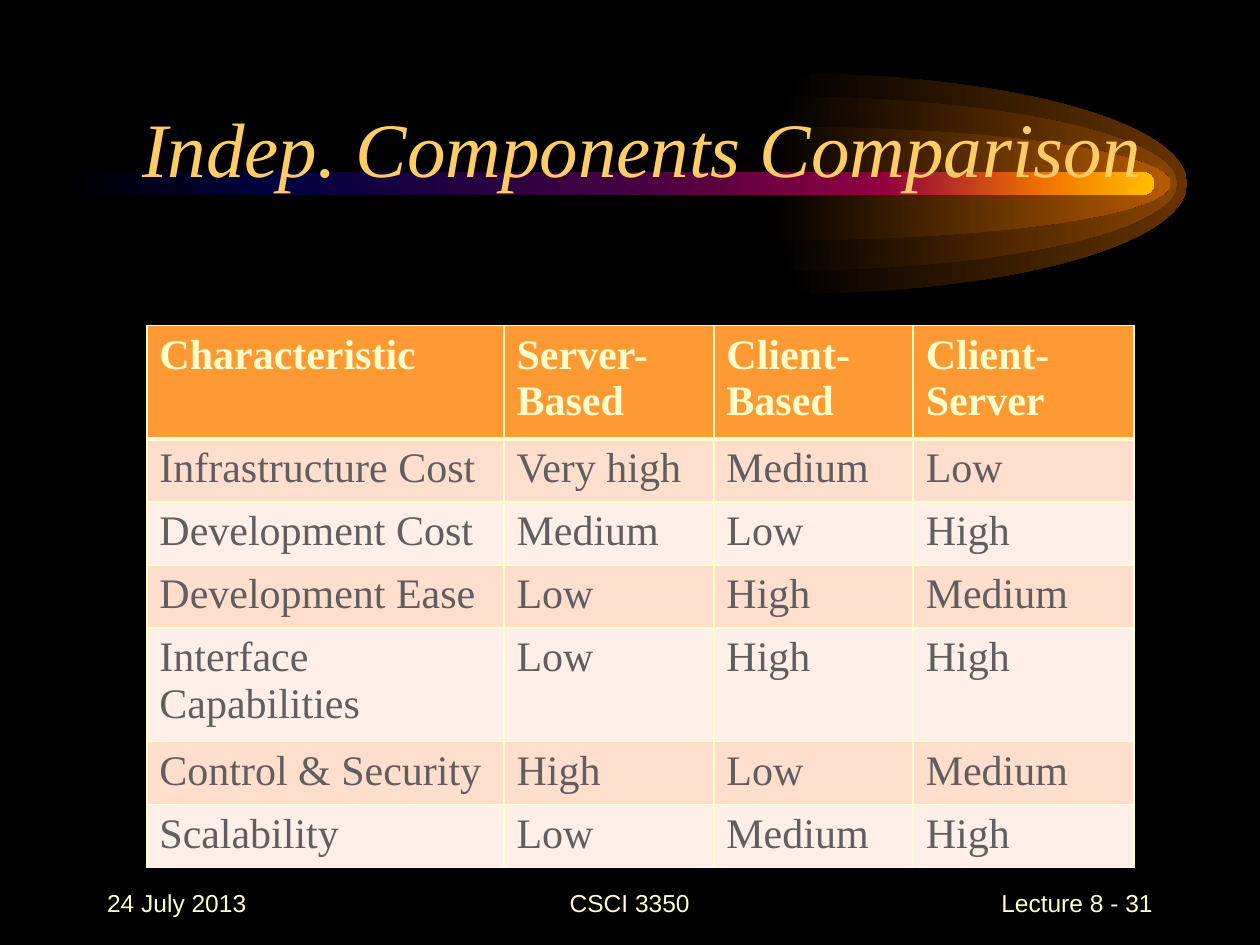
from dataclasses import dataclass

from lxml.etree import SubElement
from pptx import Presentation
from pptx.dml.color import RGBColor
from pptx.enum.shapes import MSO_SHAPE
from pptx.enum.text import MSO_ANCHOR, PP_ALIGN
from pptx.oxml.ns import qn
from pptx.util import Cm, Pt


@dataclass(frozen=True)
class Theme:
    background: str = "000000"
    title: str = "FFCC66"
    cream: str = "FFFFCC"
    header: str = "FF9933"
    bands: tuple = ("FFDECE", "FFEFE8")
    body: str = "5F5F5F"
    glows: tuple = ("663300", "894400", "B75B00")
    beam: tuple = ((0, "000000"), (20, "000040"), (50, "400040"),
                   (75, "8F0040"), (90, "F27300"), (100, "FFBF00"))
    serif: str = "Times New Roman"
    sans: str = "Arial"
    title_size: int = 44
    table_size: int = 24
    footer_size: int = 14


theme = Theme()


def paint_gradient(shape, stops):
    """Fill a borderless shape from left to right."""
    shape.shadow.inherit = False
    shape.line.fill.background()
    shape.fill.gradient()
    shape.fill.gradient_angle = 0
    stop_list = shape._element.spPr.find(qn("a:gradFill")).find(qn("a:gsLst"))
    for old_stop in list(stop_list):
        stop_list.remove(old_stop)
    for percent, color in stops:
        stop = SubElement(stop_list, qn("a:gs"), pos=str(percent * 1000))
        SubElement(stop, qn("a:srgbClr"), val=color)


def style(paragraph, face, size, color, bold=False, italic=False):
    font = paragraph.font
    font.name, font.size = face, Pt(size)
    font.bold, font.italic = bold, italic
    font.color.rgb = RGBColor.from_string(color)


presentation = Presentation()
presentation.slide_width, presentation.slide_height = Cm(25.4), Cm(19.05)
slide = presentation.slides.add_slide(presentation.slide_layouts[6])
slide.background.fill.solid()
slide.background.fill.fore_color.rgb = RGBColor.from_string(theme.background)

# Comet: three nested half ellipses, then the beam
comet_y, glow_length = 3.7, 8.08
glow_sizes = ((15.85, 2.22), (15.65, 1.76), (15.52, 1.15))
for (glow_x, glow_height), color in zip(glow_sizes, theme.glows):
    outline = slide.shapes.build_freeform(Cm(glow_x), Cm(comet_y - glow_height))
    outline.add_line_segments(
        [(Cm(glow_x + glow_length), Cm(comet_y)),
         (Cm(glow_x), Cm(comet_y + glow_height))], close=True)
    glow = outline.convert_to_shape()
    # One arc takes the place of the two straight sides
    upper_side, lower_side = list(glow._element.iter(qn("a:lnTo")))
    arc = SubElement(upper_side.getparent(), qn("a:arcTo"),
                     wR=str(Cm(glow_length)), hR=str(Cm(glow_height)),
                     stAng=str(-90 * 60000), swAng=str(180 * 60000))
    upper_side.addprevious(arc)
    for side in (upper_side, lower_side):
        side.getparent().remove(side)
    paint_gradient(glow, ((0, theme.background), (100, color)))

beam = slide.shapes.add_shape(MSO_SHAPE.ROUNDED_RECTANGLE,
                              Cm(1.27), Cm(3.47), Cm(22), Cm(0.46))
beam.adjustments[0] = 0.5
paint_gradient(beam, theme.beam)

# Footer and title
footer_look = (theme.sans, theme.footer_size, theme.cream)
title_look = (theme.serif, theme.title_size, theme.title, False, True)
captions = (
    ("24 July 2013", (1.91, 17.56, 5.28, 1.27),
     PP_ALIGN.LEFT, MSO_ANCHOR.MIDDLE, footer_look),
    ("CSCI 3350", (8.67, 17.56, 8.05, 1.27),
     PP_ALIGN.CENTER, MSO_ANCHOR.MIDDLE, footer_look),
    ("Lecture 8 - 31", (18.21, 17.56, 5.28, 1.27),
     PP_ALIGN.RIGHT, MSO_ANCHOR.MIDDLE, footer_look),
    ("Indep. Components Comparison", (1.68, 0.64, 21.59, 3.38),
     PP_ALIGN.RIGHT, MSO_ANCHOR.BOTTOM, title_look),
)
for wording, box, alignment, anchor, look in captions:
    frame = slide.shapes.add_textbox(*map(Cm, box)).text_frame
    frame.word_wrap = True
    frame.vertical_anchor = anchor
    caption = frame.paragraphs[0]
    caption.text, caption.alignment = wording, alignment
    style(caption, *look)

# Comparison table
comparison = (
    ("Characteristic", "Server-Based", "Client-Based", "Client-Server"),
    ("Infrastructure Cost", "Very high", "Medium", "Low"),
    ("Development Cost", "Medium", "Low", "High"),
    ("Development Ease", "Low", "High", "Medium"),
    ("Interface Capabilities", "Low", "High", "High"),
    ("Control & Security", "High", "Low", "Medium"),
    ("Scalability", "Low", "Medium", "High"),
)
column_widths = (7.2, 4.23, 4.02, 4.45)
one_line, two_lines = 1.19, 2.13
row_heights = (two_lines, one_line, one_line, one_line,
               two_lines, one_line, one_line)
table = slide.shapes.add_table(
    len(comparison), len(column_widths), Cm(2.96), Cm(6.56),
    Cm(sum(column_widths)), Cm(sum(row_heights))).table
for column, width in zip(table.columns, column_widths):
    column.width = Cm(width)

for row_index, ratings in enumerate(comparison):
    is_header = row_index == 0
    table.rows[row_index].height = Cm(row_heights[row_index])
    band = theme.header if is_header else theme.bands[(row_index - 1) % 2]
    edges = {"a:lnL": 1, "a:lnR": 1,
             "a:lnT": 3 if row_index == 1 else 1,
             "a:lnB": 3 if is_header else 1}
    for column_index, rating in enumerate(ratings):
        cell = table.cell(row_index, column_index)
        cell.text = rating
        style(cell.text_frame.paragraphs[0], theme.serif, theme.table_size,
              theme.cream if is_header else theme.body, bold=is_header)
        # Borders come before the fill in the cell properties
        properties = cell._tc.get_or_add_tcPr()
        for edge, points in edges.items():
            border = SubElement(properties, qn(edge), w=str(Pt(points)))
            border_fill = SubElement(border, qn("a:solidFill"))
            SubElement(border_fill, qn("a:srgbClr"), val=theme.cream)
        cell.fill.solid()
        cell.fill.fore_color.rgb = RGBColor.from_string(band)

presentation.save("out.pptx")
